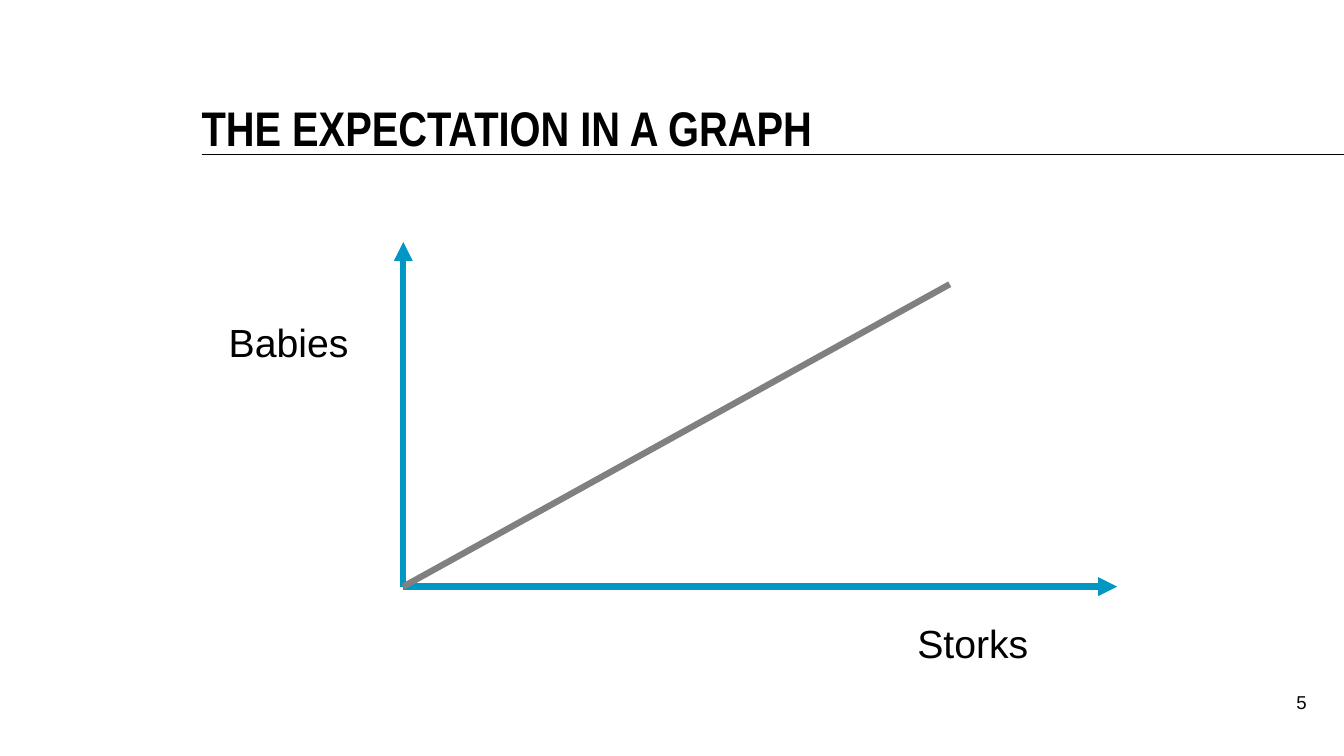
from dataclasses import dataclass

import pptx
import pptx.dml.color
import pptx.enum.shapes
import pptx.enum.text
import pptx.oxml
import pptx.oxml.ns
import pptx.util
from pptx.util import Inches

ALIGN = pptx.enum.text.PP_ALIGN
ANCHOR = pptx.enum.text.MSO_ANCHOR


@dataclass(frozen=True)
class Theme:
    ink: str = "000000"
    axis: str = "0098C3"
    trend: str = "808080"
    font: str = "Arial"
    title_font: str = "Arial Narrow"
    title_size: float = 34.7
    label_size: float = 28
    number_size: float = 13.3
    rule_width: float = 1
    graph_width: float = 4.5


class SlideBuilder:
    def __init__(self, slide, theme):
        self.slide = slide
        self.theme = theme

    def set_text(self, sp, text, size, font, bold=False, align=ALIGN.LEFT, spacing=None):
        """Put one styled paragraph in a shape."""
        tf = sp.text_frame
        tf.word_wrap = True
        tf.auto_size = pptx.enum.text.MSO_AUTO_SIZE.NONE
        tf.text = text
        p = tf.paragraphs[0]
        p.alignment = align
        p.space_before = pptx.util.Pt(0)
        if spacing:
            p.line_spacing = pptx.util.Pt(spacing)
        r = p.runs[0]
        r.font.name = font
        r.font.size = pptx.util.Pt(size)
        r.font.bold = bold
        r.font.color.rgb = pptx.dml.color.RGBColor.from_string(self.theme.ink)
        return tf

    def title(self, text, left, top, width, height):
        sp = self.slide.shapes.title
        sp.left, sp.top = Inches(left), Inches(top)
        sp.width, sp.height = Inches(width), Inches(height)
        tf = self.set_text(sp, text, self.theme.title_size, self.theme.title_font,
                           bold=True, spacing=33.3)
        tf.vertical_anchor = ANCHOR.BOTTOM
        tf.margin_left = tf.margin_top = tf.margin_right = tf.margin_bottom = 0

    def text_box(self, left, top, width, height):
        return self.slide.shapes.add_textbox(
            Inches(left), Inches(top), Inches(width), Inches(height))

    def label(self, text, left, top, width, height=0.57):
        sp = self.text_box(left, top, width, height)
        self.set_text(sp, text, self.theme.label_size, self.theme.font)

    def page_number(self, text, left, top, width, height):
        sp = self.text_box(left, top, width, height)
        tf = self.set_text(sp, text, self.theme.number_size, self.theme.font,
                           align=ALIGN.RIGHT, spacing=20)
        tf.margin_right = 0

    def line(self, start, end, color, width, arrow=False):
        cxn = self.slide.shapes.add_connector(
            pptx.enum.shapes.MSO_CONNECTOR.STRAIGHT,
            *(Inches(v) for v in (*start, *end)))
        cxn.line.color.rgb = pptx.dml.color.RGBColor.from_string(color)
        cxn.line.width = pptx.util.Pt(width)
        spPr = cxn._element.spPr
        ns = pptx.oxml.ns.nsdecls("a")
        if arrow:
            spPr.get_or_add_ln().append(
                pptx.oxml.parse_xml(f'<a:tailEnd {ns} type="triangle"/>'))
        spPr.append(pptx.oxml.parse_xml(f"<a:effectLst {ns}/>"))


def main():
    prs = pptx.Presentation()
    prs.slide_width, prs.slide_height = Inches(13.33), Inches(7.5)
    theme = Theme()
    s = SlideBuilder(prs.slides.add_slide(prs.slide_layouts[5]), theme)

    s.line((2, 1.53), (13.33, 1.53), theme.ink, theme.rule_width)
    s.page_number("5", 12.41, 6.75, 0.55, 0.52)
    s.title("THE EXPECTATION IN A GRAPH", 2, 0.75, 10.92, 0.8)

    origin = (4, 5.82)
    for axis_end in ((origin[0], 2.4), (11.08, origin[1])):
        s.line(origin, axis_end, theme.axis, theme.graph_width, arrow=True)
    s.line(origin, (9.42, 2.82), theme.trend, theme.graph_width)

    s.label("Babies", 2.17, 3.11, 1.67)
    s.label("Storks", 9, 6.09, 1.75)

    prs.save("out.pptx")


if __name__ == "__main__":
    main()
